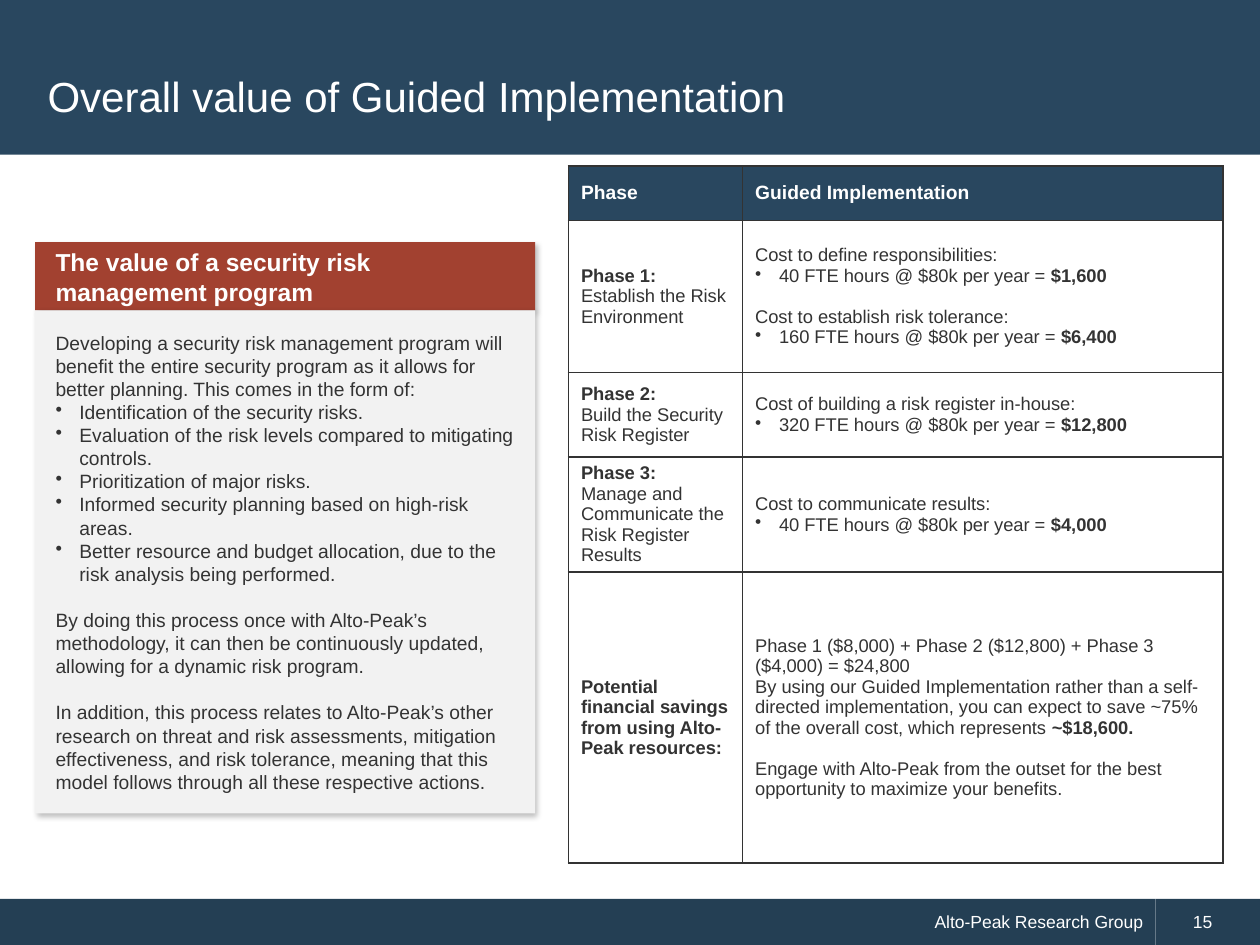
from itertools import product

from lxml.etree import SubElement
from pptx import Presentation
from pptx.dml.color import RGBColor
from pptx.enum.shapes import MSO_SHAPE as SHAPE
from pptx.enum.text import MSO_ANCHOR as ANCHOR, PP_ALIGN as ALIGN
from pptx.oxml.ns import qn
from pptx.util import Cm, Pt

COLORS = {
    "navy": "29475F",
    "footer": "243F54",
    "red": "A24130",
    "panel": "F2F2F2",
    "text": "333333",
    "white": "FFFFFF",
    "shadow": "000000",
}
FONT = "Arial"
BULLET_INDENT = Cm(0.48)
COLUMNS = [3.51, 9.68]
ROWS = [1.09, 3.07, 1.7, 2.32, 5.87]

PANEL_TEXT = [
    "Developing a security risk management program will benefit the entire security program "
    "as it allows for better planning. This comes in the form of:",
    "• Identification of the security risks.",
    "• Evaluation of the risk levels compared to mitigating controls.",
    "• Prioritization of major risks.",
    "• Informed security planning based on high-risk areas.",
    "• Better resource and budget allocation, due to the risk analysis being performed.",
    "^By doing this process once with Alto-Peak’s methodology, it can then be continuously "
    "updated, allowing for a dynamic risk program.",
    "^In addition, this process relates to Alto-Peak’s other research on threat and risk "
    "assessments, mitigation effectiveness, and risk tolerance, meaning that this model "
    "follows through all these respective actions.",
]
TABLE_TEXT = [
    (["*Phase*"], ["*Guided Implementation*"]),
    (["*Phase 1:*\nEstablish the Risk Environment"],
     ["Cost to define responsibilities:",
      "• 40 FTE hours @ $80k per year = *$1,600*",
      "^Cost to establish risk tolerance:",
      "• 160 FTE hours @ $80k per year = *$6,400*"]),
    (["*Phase 2:*\nBuild the Security Risk Register"],
     ["Cost of building a risk register in-house:",
      "• 320 FTE hours @ $80k per year = *$12,800*"]),
    (["*Phase 3:*\nManage and Communicate the Risk Register Results"],
     ["Cost to communicate results:",
      "• 40 FTE hours @ $80k per year = *$4,000*"]),
    (["*Potential financial savings from using Alto-Peak resources:*"],
     ["Phase 1 ($8,000) + Phase 2 ($12,800) + Phase 3 ($4,000) = $24,800\n"
      "By using our Guided Implementation rather than a self-directed implementation, you can "
      "expect to save ~75% of the overall cost, which represents *~$18,600.*",
      "^Engage with Alto-Peak from the outset for the best opportunity to maximize your "
      "benefits."]),
]


def rgb(name):
    """Return the named colour."""
    return RGBColor.from_string(COLORS[name])


def add_bullet(p):
    """Give a paragraph a hanging bullet."""
    pPr = p._p.get_or_add_pPr()
    pPr.set("marL", str(BULLET_INDENT))
    pPr.set("indent", str(-BULLET_INDENT))
    SubElement(pPr, qn("a:buChar"), char="•")


def write(tf, paragraphs, size=11, color="text", line=None, align=ALIGN.LEFT):
    """Write paragraphs: '• ' is a bullet, '^' a gap above, '*' switches bold."""
    for i, text in enumerate(paragraphs):
        p = tf.paragraphs[0] if i == 0 else tf.add_paragraph()
        p.alignment = align
        if line:
            p.line_spacing = Pt(line)
        if text.startswith("^"):
            p.space_before = Pt(line)
        if text.startswith("• "):
            add_bullet(p)
        for j, part in enumerate(text.removeprefix("^").removeprefix("• ").split("*")):
            for k, piece in enumerate(part.split("\n")):
                if k:
                    p.add_line_break()
                if piece:
                    r = p.add_run()
                    r.text = piece
                    r.font.name, r.font.size = FONT, Pt(size)
                    r.font.bold = j % 2 == 1
                    r.font.color.rgb = rgb(color)


def add_shadow(sp):
    """Add a soft shadow towards the lower right."""
    effects = sp._element.spPr.find(qn("a:effectLst"))
    shadow = SubElement(effects, qn("a:outerShdw"), blurRad=str(Pt(3)), dist=str(Pt(2)),
                        dir="2700000", algn="tl", rotWithShape="0")
    tint = SubElement(shadow, qn("a:srgbClr"), val=COLORS["shadow"])
    SubElement(tint, qn("a:alpha"), val="25000")


def add_box(s, left, top, width, height, fill, paragraphs=(), inset=0.25, shadow=False, **style):
    """Add a filled rectangle with vertically centred text."""
    sp = s.shapes.add_shape(SHAPE.RECTANGLE, Cm(left), Cm(top), Cm(width), Cm(height))
    sp.fill.solid()
    sp.fill.fore_color.rgb = rgb(fill)
    sp.line.fill.background()
    sp.shadow.inherit = False
    if shadow:
        add_shadow(sp)
    tf = sp.text_frame
    tf.word_wrap = True
    tf.vertical_anchor = ANCHOR.MIDDLE
    tf.margin_left, tf.margin_right = Cm(inset), Cm(0.41 if shadow else 0.25)
    write(tf, paragraphs, **style)


def add_title(s, text):
    """Add the slide title."""
    tf = s.shapes.add_textbox(Cm(0.71), Cm(0.71), Cm(23.95), Cm(2.44)).text_frame
    tf.word_wrap = True
    tf.vertical_anchor = ANCHOR.MIDDLE
    write(tf, [text], size=24, color="white")


def add_borders(cell):
    """Draw a thin dark line on every side of a cell."""
    tcPr = cell._tc.get_or_add_tcPr()
    for i, side in enumerate(("a:lnL", "a:lnR", "a:lnT", "a:lnB")):
        ln = tcPr.makeelement(qn(side), {"w": str(Pt(1))})
        tcPr.insert(i, ln)
        SubElement(SubElement(ln, qn("a:solidFill")), qn("a:srgbClr"), val=COLORS["text"])


def add_cost_table(s):
    """Add the table of phases and their costs."""
    table = s.shapes.add_table(len(ROWS), len(COLUMNS), Cm(11.46), Cm(3.35),
                               Cm(sum(COLUMNS)), Cm(sum(ROWS))).table
    table.first_row = table.horz_banding = False
    for column, width in zip(table.columns, COLUMNS):
        column.width = Cm(width)
    for row, height in zip(table.rows, ROWS):
        row.height = Cm(height)
    for i, j in product(range(len(ROWS)), range(len(COLUMNS))):
        cell = table.cell(i, j)
        cell.vertical_anchor = ANCHOR.MIDDLE
        cell.fill.solid()
        cell.fill.fore_color.rgb = rgb("white" if i else "navy")
        add_borders(cell)
        style = {"size": 10.5, "line": 11.7} if i else {"color": "white"}
        write(cell.text_frame, TABLE_TEXT[i][j], **style)


def main():
    """Build the slide and save it."""
    prs = Presentation()
    prs.slide_width, prs.slide_height = Cm(25.4), Cm(19.05)
    s = prs.slides.add_slide(prs.slide_layouts[6])
    add_box(s, 0, 18.12, 23.29, 0.93, "footer", ["Alto-Peak Research Group"],
            size=10, color="white", align=ALIGN.RIGHT)
    add_box(s, 23.29, 18.12, 2.11, 0.93, "footer", ["15"], inset=0.76, size=10, color="white")
    add_box(s, 0, 0, 25.4, 3.12, "navy")
    add_title(s, "Overall value of Guided Implementation")
    add_cost_table(s)
    add_box(s, 0.71, 4.88, 10.08, 1.38, "red",
            ["*The value of a security risk management program*"],
            inset=0.41, shadow=True, size=14, color="white", line=17.1)
    add_box(s, 0.71, 6.26, 10.08, 10.14, "panel", PANEL_TEXT,
            inset=0.41, shadow=True, line=13.2)
    prs.save("out.pptx")


if __name__ == "__main__":
    main()
